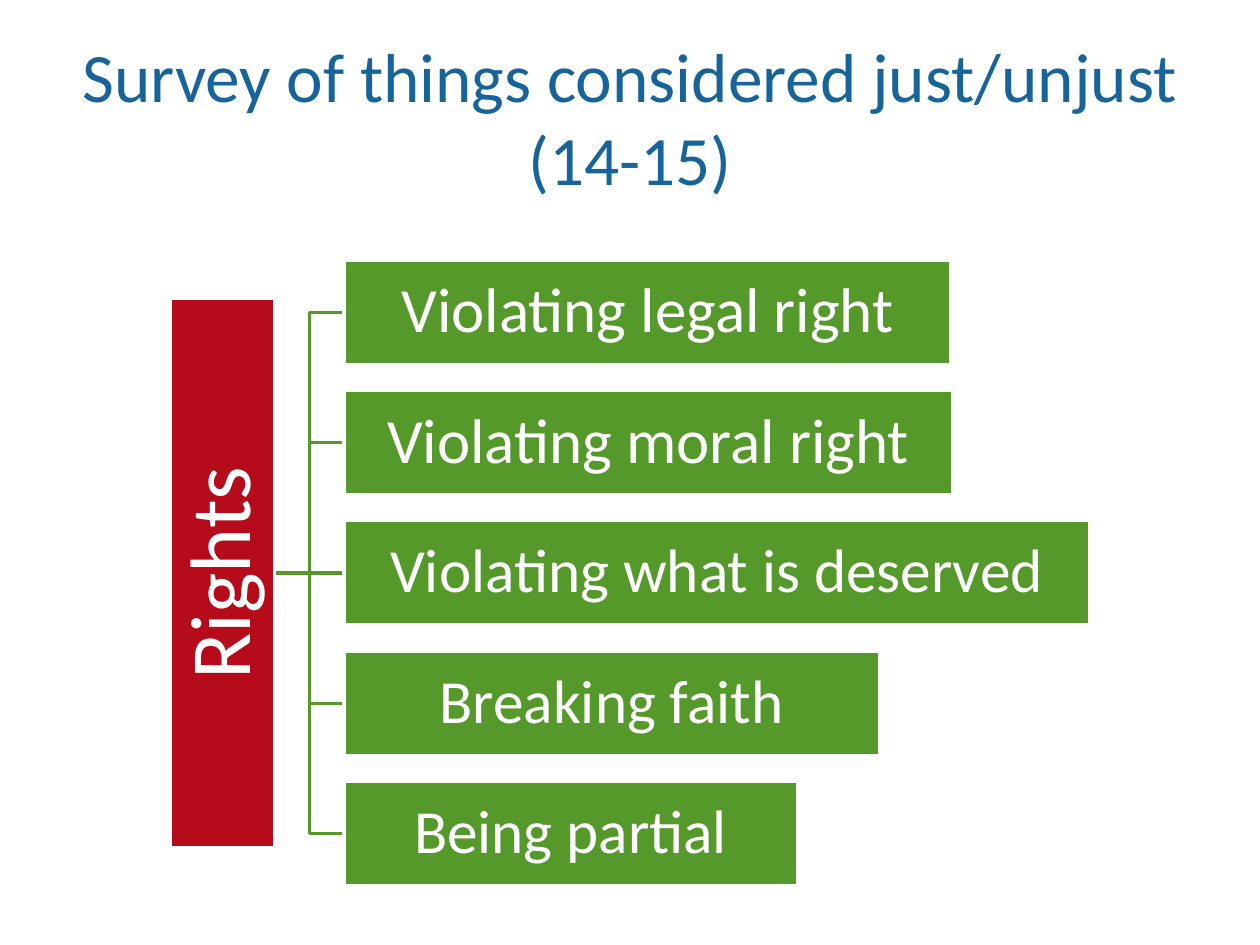
from lxml import etree
from pptx import Presentation
from pptx.dml.color import RGBColor
from pptx.enum import shapes, text
from pptx.oxml.ns import qn
from pptx.util import Inches, Pt

BLUE, RED, GREEN, WHITE = "16649A", "B50B1B", "55992B", "FFFFFF"
TRUNK_X, BRANCH_X = 2.18, 2.73
TOP, STEP, BOX_H = 2.065, 1.034, 0.83
ROOT_LENGTH = 4.36
MID_Y = TOP + 2 * STEP + BOX_H / 2
BRANCHES = [
    ("Violating legal right", 4.82, 36),
    ("Violating moral right", 4.83, 36),
    ("Violating what is deserved", 5.92, 35),
    ("Breaking faith", 4.25, 35),
    ("Being partial", 3.6, 35),
]


def rgb(value):
    return RGBColor.from_string(value)


def set_line(sp, color):
    sp.line.color.rgb = rgb(color)
    sp.line.width = Pt(2)


def set_text(sp, words, size, color, **frame_format):
    tf = sp.text_frame
    frame_format = {"word_wrap": True, "auto_size": text.MSO_AUTO_SIZE.NONE,
                    "vertical_anchor": text.MSO_ANCHOR.MIDDLE, **frame_format}
    for name, value in frame_format.items():
        setattr(tf, name, value)
    p = tf.paragraphs[0]
    p.alignment = text.PP_ALIGN.CENTER
    r = p.add_run()
    r.text = words
    for name, value in {"name": "Calibri", "size": Pt(size)}.items():
        setattr(r.font, name, value)
    r.font.color.rgb = rgb(color)
    return p


def add_title(s, words):
    sp = s.shapes.title
    sp.left, sp.top, sp.width, sp.height = map(Inches, (0.5, 0.3, 9, 1.25))
    set_text(sp, words, 39.6, BLUE)


def add_box(s, x, y, w, words, size, fill, rotation=0):
    sp = s.shapes.add_shape(shapes.MSO_SHAPE.RECTANGLE,
                            *map(Inches, (x, y, w, BOX_H)))
    sp.shadow.inherit = False
    sp.rotation = rotation
    sp.fill.solid()
    sp.fill.fore_color.rgb = rgb(fill)
    set_line(sp, WHITE)
    sides = ("left", "right", "top", "bottom")
    margins = {f"margin_{side}": Inches(0.03) for side in sides}
    set_text(sp, words, size, WHITE, **margins).line_spacing = 0.9


def add_link(s, y):
    """Link the root to the branch centred at y, bending halfway across."""
    if abs(y - MID_Y) < 0.01:
        sp = s.shapes.add_connector(
            shapes.MSO_CONNECTOR.STRAIGHT,
            *map(Inches, (TRUNK_X, MID_Y, BRANCH_X, MID_Y)))
        etree.SubElement(sp._element.spPr, qn("a:effectLst"))
    else:
        bend = (TRUNK_X + BRANCH_X) / 2
        fb = s.shapes.build_freeform(Inches(TRUNK_X), Inches(MID_Y))
        points = [(bend, MID_Y), (bend, y), (BRANCH_X, y)]
        fb.add_line_segments([(Inches(px), Inches(py)) for px, py in points],
                             close=False)
        sp = fb.convert_to_shape()
        sp.fill.background()
        sp.shadow.inherit = False
    set_line(sp, GREEN)


def main():
    prs = Presentation()
    prs.slide_width, prs.slide_height = Inches(10), Inches(7.5)
    s = prs.slides.add_slide(prs.slide_layouts[5])
    add_title(s, "Survey of things considered just/unjust (14-15)")
    tops = [TOP + i * STEP for i in range(len(BRANCHES))]
    for y in tops:
        add_link(s, y + BOX_H / 2)
    root_x = TRUNK_X - BOX_H / 2 - ROOT_LENGTH / 2
    add_box(s, root_x, MID_Y - BOX_H / 2, ROOT_LENGTH, "Rights", 49, RED, 270)
    for y, (words, width, size) in zip(tops, BRANCHES):
        add_box(s, BRANCH_X, y, width, words, size, GREEN)
    prs.save("out.pptx")


if __name__ == "__main__":
    main()
